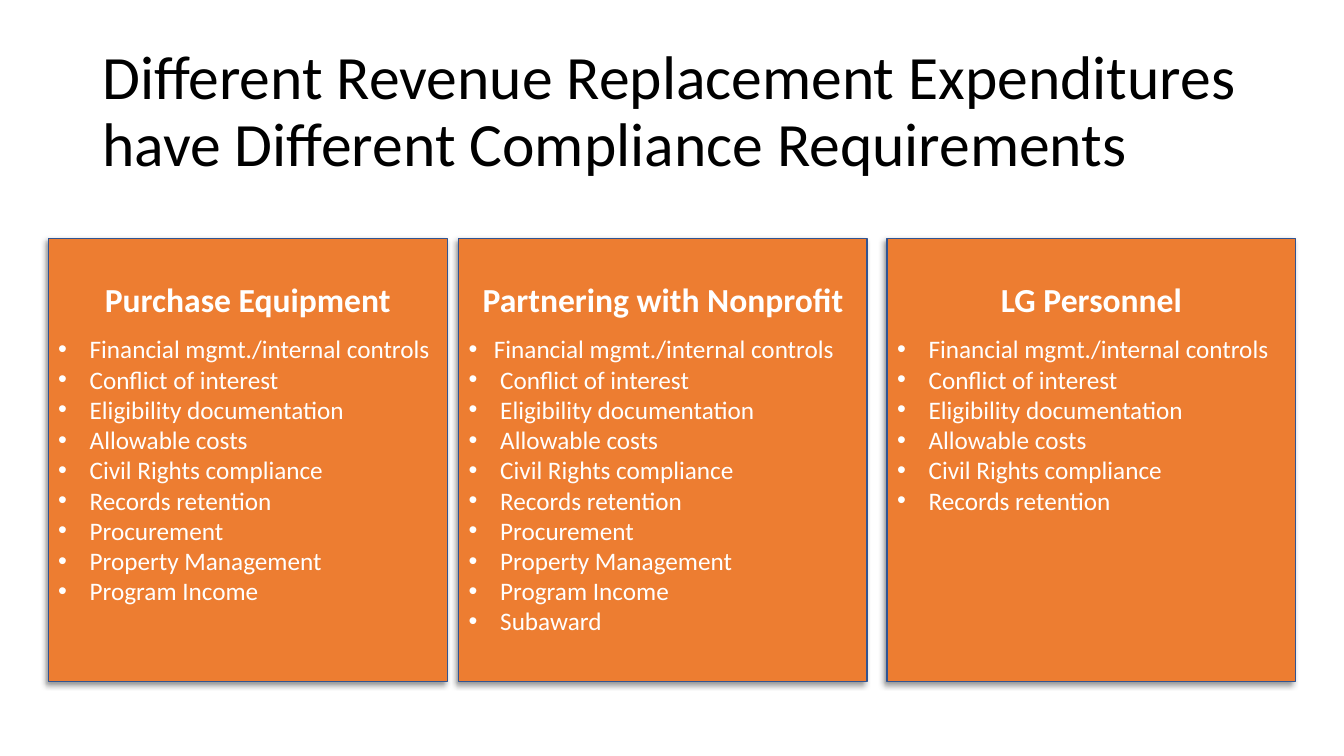
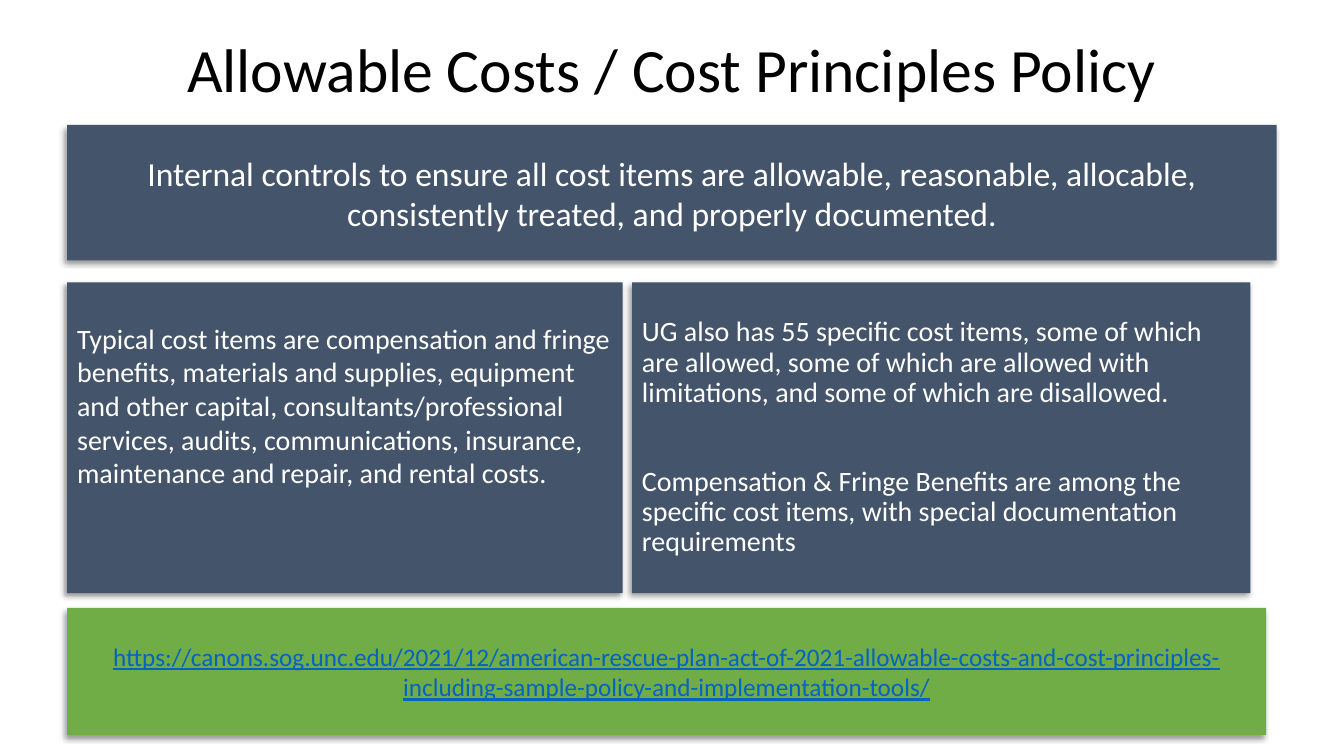
from lxml.etree import SubElement
from pptx import Presentation
from pptx.dml.color import RGBColor
from pptx.enum.shapes import MSO_SHAPE
from pptx.enum.text import MSO_ANCHOR, PP_ALIGN
from pptx.oxml.ns import qn
from pptx.util import Pt

PX = 9525  # EMU per px, for a slide of 1280 x 720 px
FONT = "Calibri"
COLORS = {
    "black": "000000",
    "white": "FFFFFF",
    "orange": "ED7D31",
    "outline": "325491",
    "slate": "44546A",
    "green": "70AD47",
    "link": "0563C1",
}


def write(frame, text, size, color="white", align=PP_ALIGN.LEFT, spacing=1.0):
    frame.word_wrap = True
    frame.text = text
    for paragraph in frame.paragraphs:
        paragraph.alignment = align
        paragraph.line_spacing = spacing
        for run in paragraph.runs:
            run.font.name = FONT
            run.font.size = Pt(size)
            run.font.color.rgb = RGBColor.from_string(COLORS[color])


def add_panel(slide, box, fill):
    panel = slide.shapes.add_shape(MSO_SHAPE.RECTANGLE, *(n * PX for n in box))
    panel.fill.solid()
    panel.fill.fore_color.rgb = RGBColor.from_string(COLORS[fill])
    panel.line.fill.background()
    panel.shadow.inherit = False
    effects = panel._element.spPr.find(qn("a:effectLst"))
    shadow = SubElement(effects, qn("a:outerShdw"), blurRad=str(Pt(4)),
                        dist=str(Pt(3)), dir="8100000", algn="tr", rotWithShape="0")
    tint = SubElement(shadow, qn("a:srgbClr"), val=COLORS["black"])
    SubElement(tint, qn("a:alpha"), val="40000")
    panel.text_frame.vertical_anchor = MSO_ANCHOR.MIDDLE
    return panel


deck = Presentation()
deck.slide_width, deck.slide_height = 1280 * PX, 720 * PX

# Slides and their titles
TITLES = [
    ("Different Revenue Replacement Expenditures have Different Compliance Requirements",
     38, PP_ALIGN.LEFT),
    ("Allowable Costs / Cost Principles Policy", 0, PP_ALIGN.CENTER),
]
for text, top, align in TITLES:
    slide = deck.slides.add_slide(deck.slide_layouts[6])
    title = slide.shapes.add_textbox(88 * PX, top * PX, 1104 * PX, 139 * PX)
    title.text_frame.vertical_anchor = MSO_ANCHOR.MIDDLE
    write(title.text_frame, text, 44, "black", align, 0.9)
requirements_slide, policy_slide = deck.slides

# Requirement cards: each kind of spending takes the first items of one list
REQUIREMENTS = [
    "Financial mgmt./internal controls",
    "Conflict of interest",
    "Eligibility documentation",
    "Allowable costs",
    "Civil Rights compliance",
    "Records retention",
    "Procurement",
    "Property Management",
    "Program Income",
    "Subaward",
]
CARDS = [  # heading, left, width, number of requirements, first indent
    ("Purchase Equipment", 46, 380, 9, 30),
    ("Partnering with Nonprofit", 437, 389, 10, 24),
    ("LG Personnel", 845, 389, 6, 30),
]
for heading, left, width, count, first_indent in CARDS:
    card = add_panel(requirements_slide, (left, 227, width, 422), "orange")
    card.line.color.rgb = RGBColor.from_string(COLORS["outline"])
    card.line.width = Pt(1)
    frame = card.text_frame
    frame.vertical_anchor = MSO_ANCHOR.TOP
    frame.margin_top = 39 * PX
    write(frame, "\n".join([heading] + REQUIREMENTS[:count]), 18)
    header, *items = frame.paragraphs
    header.alignment = PP_ALIGN.CENTER
    header.space_after = Pt(10)
    header.runs[0].font.size = Pt(24)
    header.runs[0].font.bold = True
    for number, item in enumerate(items):
        indent = 30 if number else first_indent
        properties = item._p.get_or_add_pPr()
        properties.set("marL", str(indent * PX))
        properties.set("indent", str(-indent * PX))
        SubElement(properties, qn("a:buFont"), typeface="Arial")
        SubElement(properties, qn("a:buChar"), char="•")

# Policy statement
statement = add_panel(policy_slide, (64, 119, 1152, 129), "slate")
write(statement.text_frame,
      "Internal controls to ensure all cost items are allowable, reasonable, "
      "allocable, consistently treated, and properly documented.",
      24, align=PP_ALIGN.CENTER)

# Typical cost items
typical = add_panel(policy_slide, (64, 269, 529, 296), "slate")
typical.text_frame.vertical_anchor = MSO_ANCHOR.TOP
typical.text_frame.margin_top = 37 * PX
write(typical.text_frame,
      "Typical cost items are compensation and fringe benefits, materials and "
      "supplies, equipment and other capital, consultants/professional services, "
      "audits, communications, insurance, maintenance and repair, and rental costs.",
      20)

# Specific cost items
specific = add_panel(policy_slide, (602, 269, 589, 296), "slate")
write(specific.text_frame,
      "UG also has 55 specific cost items, some of which are allowed, some of "
      "which are allowed with limitations, and some of which are disallowed.\n"
      "Compensation & Fringe Benefits are among the specific cost items, with "
      "special documentation requirements",
      20, spacing=0.9)
specific.text_frame.paragraphs[1].space_before = Pt(42)

# Source address
source = add_panel(policy_slide, (64, 579, 1142, 121), "green")
write(source.text_frame,
      "https://canons.sog.unc.edu/2021/12/american-rescue-plan-act-of-2021-"
      "allowable-costs-and-cost-principles-including-sample-policy-and-"
      "implementation-tools/",
      18, "link", PP_ALIGN.CENTER)
source.text_frame.paragraphs[0].runs[0].font.underline = True

deck.save("out.pptx")
